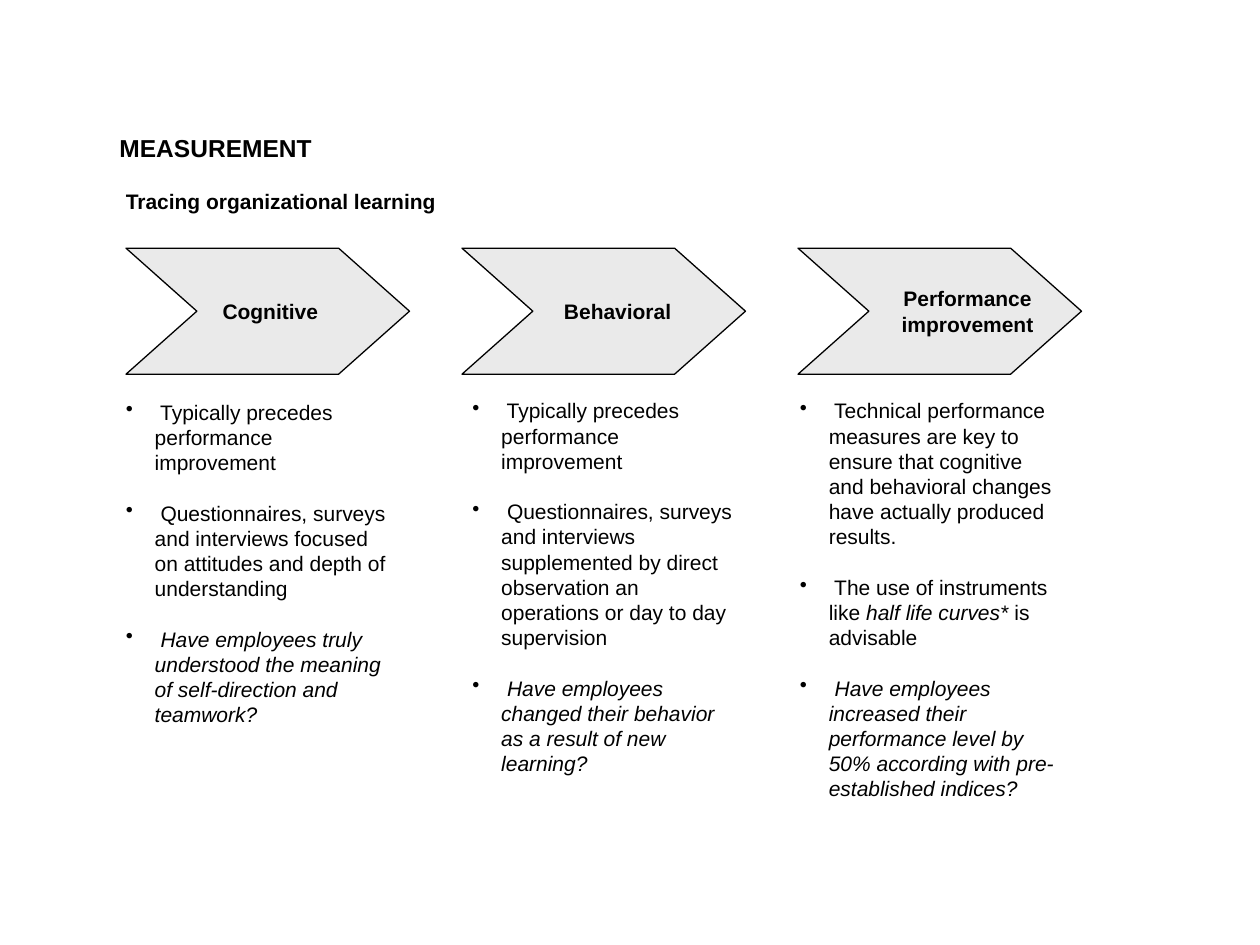
from pptx import Presentation, util as u
from pptx.dml.color import RGBColor
from pptx.enum import shapes, text
from pptx.oxml import parse_xml
from pptx.oxml.ns import nsdecls

COLORS = {"ink": "000000", "arrow": "EAEAEA"}
FONT = "Arial"

TITLE = "MEASUREMENT"
SUBTITLE = "Tracing organizational learning"
# Text between bars is italic. "shift" moves the heading right of the arrow's centre.
STAGES = [
    {"heading": ["Cognitive"], "shift": 0.02, "left": 0.9, "top": 3.12, "height": 2.5,
     "points": [
         " Typically precedes performance improvement",
         " Questionnaires, surveys and interviews focused on attitudes and depth of understanding",
         " |Have employees truly understood the meaning of self-direction and teamwork?|"]},
    {"heading": ["Behavioral"], "shift": 0.11, "left": 3.65, "top": 3.11, "height": 2.5,
     "points": [
         " Typically precedes performance improvement",
         " Questionnaires, surveys and interviews supplemented by direct observation an "
         "operations or day to day supervision",
         " |Have employees changed their behavior as a result of new learning?|"]},
    {"heading": ["Performance", "improvement"], "shift": 0.22, "left": 6.25, "top": 3.11, "height": 3.1,
     "points": [
         " Technical performance measures are key to ensure that cognitive and behavioral "
         "changes have actually produced results.",
         " The use of instruments like |half life curves* |is advisable",
         " |Have employees increased their performance level by 50% according with "
         "pre-established indices?|"]},
]

WIDTH, HEIGHT = 10, 7.5
ARROW_LEFT, ARROW_TOP, ARROW_WIDTH, ARROW_HEIGHT = 1, 1.97, 2.25, 1
ARROW_PITCH = 8 / 3
ARROW_POINT = ARROW_WIDTH / 4
POINTS_WIDTH = 2.27
BULLET_INDENT = 0.23
POINT_GAP = 14.4


def color(name):
    return RGBColor.from_string(COLORS[name])


def add_bullet(paragraph):
    props = paragraph._p.get_or_add_pPr()
    indent = u.Inches(BULLET_INDENT)
    props.set("marL", str(indent))
    props.set("indent", str(-indent))
    props.append(parse_xml(
        f'<a:buClr {nsdecls("a")}><a:srgbClr val="{COLORS["ink"]}"/></a:buClr>'))
    props.append(parse_xml(f'<a:buChar {nsdecls("a")} char="•"/>'))


def write(frame, paragraphs, size=12, bold=False, align=text.PP_ALIGN.LEFT,
          bullets=False, gap=0, wrap=False):
    frame.word_wrap = wrap
    for index, content in enumerate(paragraphs):
        paragraph = frame.add_paragraph() if index else frame.paragraphs[0]
        paragraph.alignment = align
        if index and gap:
            paragraph.space_before = u.Pt(gap)
        if bullets:
            add_bullet(paragraph)
        for part, words in enumerate(content.split("|")):
            if words:
                run = paragraph.add_run()
                run.text = words
                run.font.name, run.font.size = FONT, u.Pt(size)
                run.font.bold, run.font.italic = bold, part % 2 == 1
                run.font.color.rgb = color("ink")


def add_text(slide, box, paragraphs, **style):
    frame = slide.shapes.add_textbox(*map(u.Inches, box)).text_frame
    write(frame, paragraphs, **style)
    frame.auto_size = text.MSO_AUTO_SIZE.SHAPE_TO_FIT_TEXT


def add_arrow(slide, column, stage):
    box = ARROW_LEFT + column * ARROW_PITCH, ARROW_TOP, ARROW_WIDTH, ARROW_HEIGHT
    arrow = slide.shapes.add_shape(shapes.MSO_SHAPE.CHEVRON, *map(u.Inches, box))
    arrow.adjustments[0] = ARROW_POINT / ARROW_HEIGHT
    arrow.shadow.inherit = False
    arrow.fill.solid()
    arrow.fill.fore_color.rgb = color("arrow")
    arrow.line.color.rgb = color("ink")
    arrow.line.width = u.Pt(0.75)
    frame = arrow.text_frame
    frame.vertical_anchor = text.MSO_ANCHOR.MIDDLE
    frame.margin_left = u.Inches(0.1 + 2 * stage["shift"])
    write(frame, stage["heading"], bold=True, align=text.PP_ALIGN.CENTER)


def main():
    deck = Presentation()
    deck.slide_width, deck.slide_height = u.Inches(WIDTH), u.Inches(HEIGHT)
    slide = deck.slides.add_slide(deck.slide_layouts[6])
    add_text(slide, (0.85, 1.01, 1.73, 0.34), [TITLE], size=14, bold=True)
    for column, stage in enumerate(STAGES):
        add_arrow(slide, column, stage)
    add_text(slide, (0.9, 1.45, 2.67, 0.3), [SUBTITLE], bold=True)
    for stage in STAGES:
        box = stage["left"], stage["top"], POINTS_WIDTH, stage["height"]
        add_text(slide, box, stage["points"], bullets=True, gap=POINT_GAP, wrap=True)
    deck.save("out.pptx")


if __name__ == "__main__":
    main()
